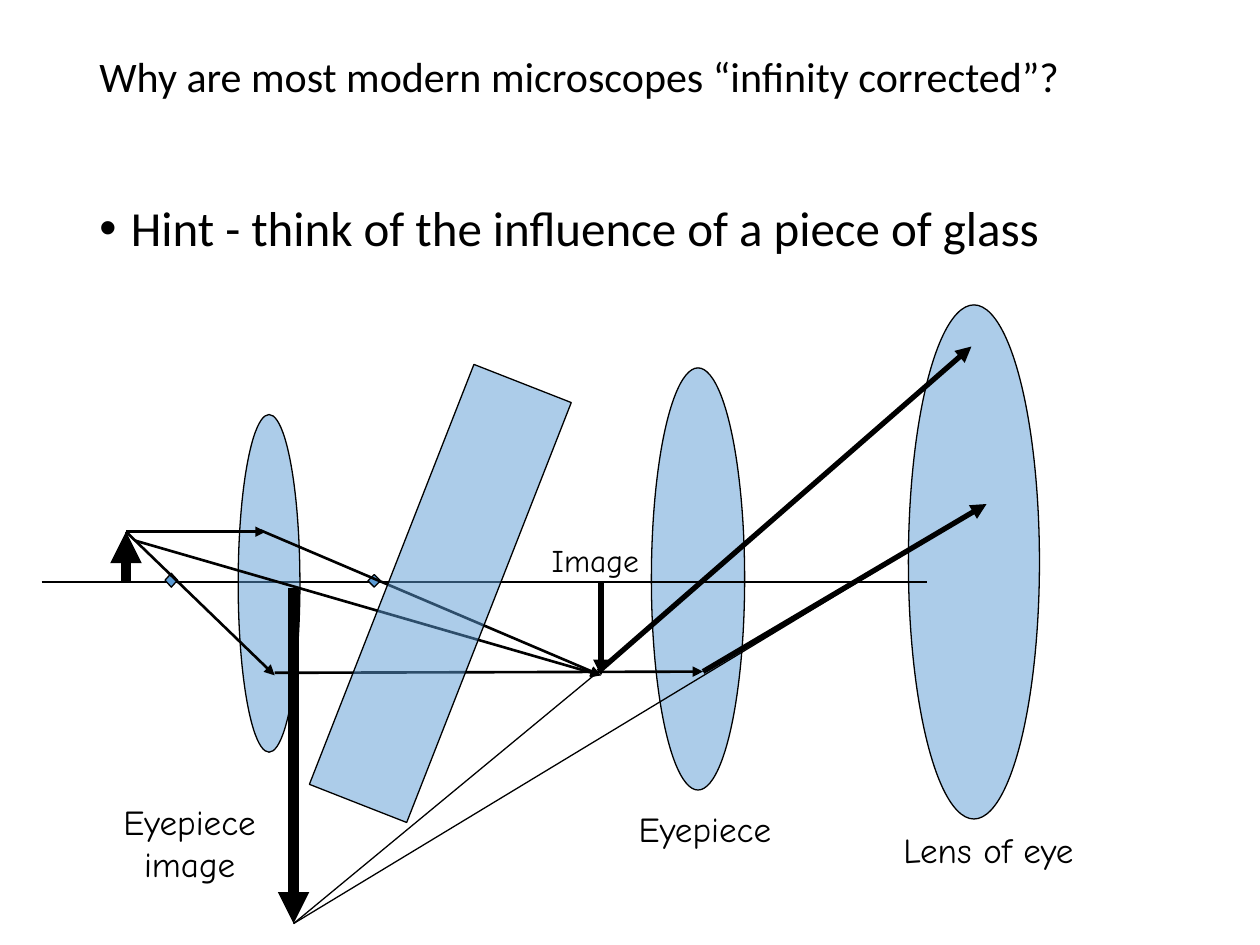
"""Build a slide on infinity-corrected microscopes with a ray diagram."""
from lxml.etree import SubElement
from pptx import Presentation
from pptx.dml.color import RGBColor
from pptx.enum.shapes import MSO_CONNECTOR as Connector, MSO_SHAPE as Shape
from pptx.enum.text import MSO_ANCHOR as Anchor, PP_ALIGN as Align
from pptx.oxml.ns import qn
from pptx.util import Inches, Pt

BLACK, GLASS_BLUE = "000000", "5B9BD5"
TITLE = "Why are most modern microscopes “infinity corrected”?"
HINT = "Hint - think of the influence of a piece of glass"

EYE_LENS = (7.21, 2.42, 1.04, 4.08)
EYEPIECE = (5.17, 2.92, 0.74, 3.35)
OBJECTIVE = (1.89, 3.29, 0.49, 2.68)
GLASS_PLATE = (3.08, 2.92, 0.83, 3.58)
PLATE_ANGLE = 21.4
FOCAL_POINTS = [(2.92, 4.56, 0.1, 0.1), (1.31, 4.55, 0.1, 0.11)]

AXIS = ((0.33, 4.62), (7.36, 4.62))
OBJECT_TIP = (1, 4.22)
IMAGE_TIP = (4.77, 5.36)
RAY_CROSSING = (4.75, 5.33)
EYEPIECE_EXIT = (5.58, 5.33)
VIRTUAL_TIP = (2.33, 7.33)

ARROWS = [
    ((1.07, 4.29), IMAGE_TIP, 1.5),
    ((1, 4.62), OBJECT_TIP, 6),
    (OBJECT_TIP, (2.11, 4.22), 1.5),
    (OBJECT_TIP, (2.18, 5.36), 1.5),
    ((2.18, 5.34), EYEPIECE_EXIT, 1.5),
    ((4.77, 4.62), IMAGE_TIP, 3),
    ((2.07, 4.21), IMAGE_TIP, 1.5),
    ((2.33, 4.67), VIRTUAL_TIP, 6),
    (RAY_CROSSING, (7.71, 2.75), 3),
    (EYEPIECE_EXIT, (7.83, 4), 3),
]
BACK_PROJECTIONS = [(RAY_CROSSING, VIRTUAL_TIP), ((7.42, 4.25), VIRTUAL_TIP)]

LABELS = [
    (["Image"], (4.26, 4.22, 0.93, 0.45), 18),
    (["Eyepiece", "image"], (0.83, 6.25, 1.35, 0.88), 20),
    (["Eyepiece"], (4.92, 6.33, 1.35, 0.49), 20),
    (["Lens of eye"], (7, 6.5, 1.69, 0.49), 20),
]


def color(value):
    return RGBColor.from_string(value)


def add_glass(page, kind, place, opacity=50, angle=0):
    shape = page.shapes.add_shape(kind, *map(Inches, place))
    shape.shadow.inherit = False
    shape.rotation = angle
    shape.fill.solid()
    shape.fill.fore_color.rgb = color(GLASS_BLUE)
    shape.line.color.rgb = color(BLACK)
    shape.line.width = Pt(0.75)
    if opacity < 100:
        tint = shape.fill._xPr.find(qn("a:solidFill"))[0]
        SubElement(tint, qn("a:alpha"), val=str(opacity * 1000))


def add_line(page, start, end, width=0.75, arrow=False):
    line = page.shapes.add_connector(
        Connector.STRAIGHT, *map(Inches, (*start, *end)))
    line.line.color.rgb = color(BLACK)
    line.line.width = Pt(width)
    if arrow:
        SubElement(line.line._get_or_add_ln(), qn("a:tailEnd"), type="triangle")
    SubElement(line._element.spPr, qn("a:effectLst"))


def add_text(page, lines, place, font, size, anchor=Anchor.TOP, align=Align.LEFT,
             wrap=True, spacing=None, bullet=False):
    box = page.shapes.add_textbox(*map(Inches, place))
    frame = box.text_frame
    frame.word_wrap = wrap
    frame.vertical_anchor = anchor
    frame.text = "\n".join(lines)
    for para in frame.paragraphs:
        para.alignment = align
        para.line_spacing = spacing
        if bullet:
            props = para._p.get_or_add_pPr()
            props.set("marL", str(Inches(0.25)))
            props.set("indent", str(Inches(-0.25)))
            SubElement(props, qn("a:buFont"), typeface="Arial")
            SubElement(props, qn("a:buChar"), char="•")
        para.font.name = font
        para.font.size = Pt(size)
        para.font.color.rgb = color(BLACK)


def main():
    deck = Presentation()
    deck.slide_width, deck.slide_height = Inches(10), Inches(7.5)
    page = deck.slides.add_slide(deck.slide_layouts[6])

    for lens in (EYE_LENS, EYEPIECE):
        add_glass(page, Shape.OVAL, lens)
    add_line(page, *AXIS)
    add_glass(page, Shape.OVAL, OBJECTIVE)
    for point in FOCAL_POINTS:
        add_glass(page, Shape.DIAMOND, point, opacity=100)
    for start, end, width in ARROWS:
        add_line(page, start, end, width, arrow=True)
    for start, end in BACK_PROJECTIONS:
        add_line(page, start, end)
    for lines, place, size in LABELS:
        add_text(page, lines, place, "Comic Neue", size,
                 Anchor.MIDDLE, Align.CENTER, wrap=False)
    add_glass(page, Shape.RECTANGLE, GLASS_PLATE, angle=PLATE_ANGLE)

    add_text(page, [TITLE], (0.69, 0.4, 8.62, 1.45), "Calibri", 24, spacing=0.9)
    add_text(page, [HINT], (0.69, 1.57, 8.62, 4.76), "Calibri", 28,
             spacing=0.9, bullet=True)
    deck.save("out.pptx")


if __name__ == "__main__":
    main()
